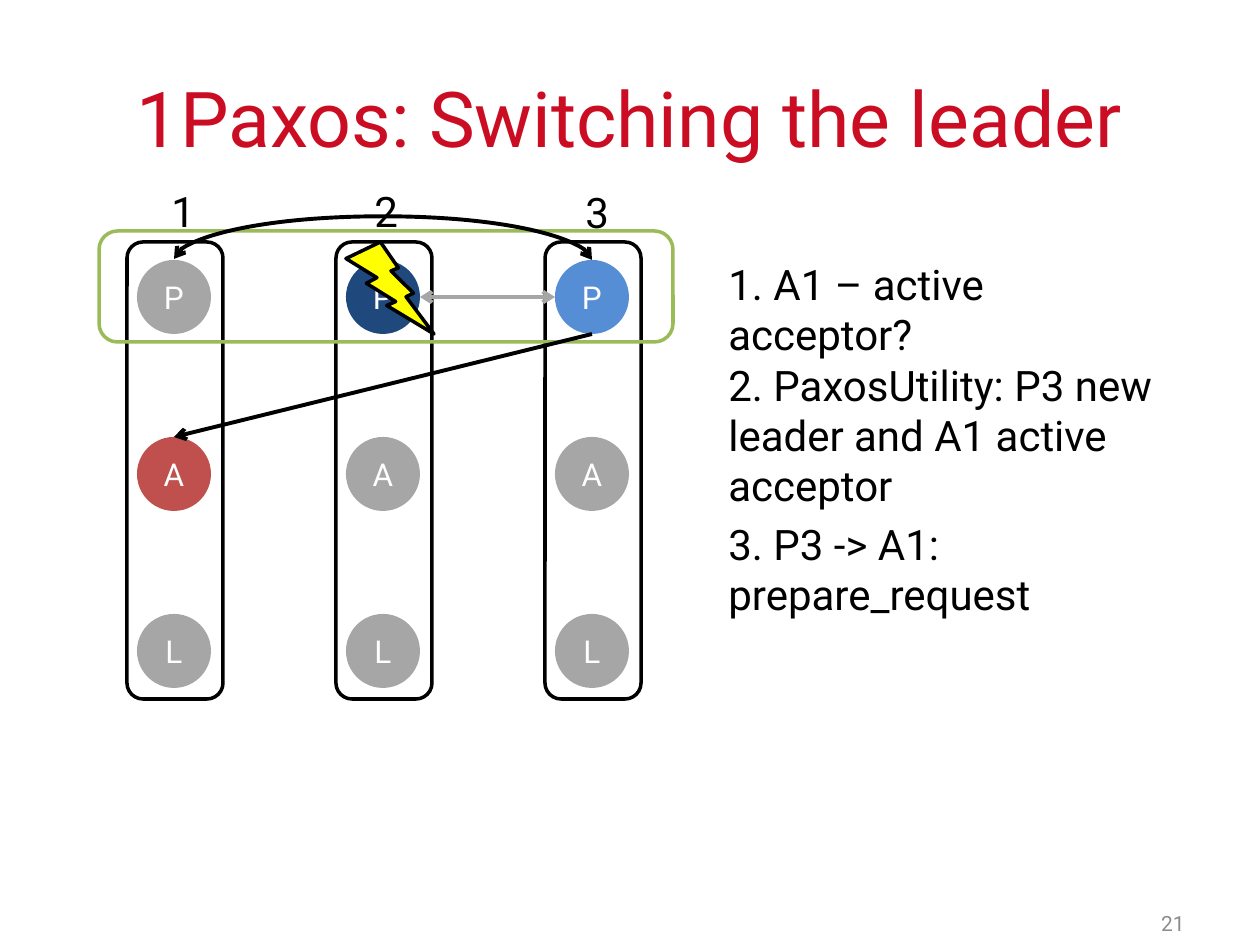
from lxml import etree
from pptx import Presentation
from pptx.dml.color import RGBColor
from pptx.enum.shapes import MSO_CONNECTOR, MSO_SHAPE
from pptx.enum.text import MSO_ANCHOR, PP_ALIGN
from pptx.oxml.ns import qn
from pptx.util import Pt

PX = 914400 / 126  # EMU in one px
FONT = "Roboto"
COLORS = {
    "title": "CB0D24", "number": "8C8C8C", "black": "000000", "white": "FFFFFF",
    "idle": "A6A6A6", "old_leader": "1F497D", "new_leader": "558ED5",
    "acceptor": "C0504D", "bolt": "FFFF00", "group": "9BBB59",
}
LEFT, CENTER, RIGHT = PP_ALIGN.LEFT, PP_ALIGN.CENTER, PP_ALIGN.RIGHT
TOP, MIDDLE = MSO_ANCHOR.TOP, MSO_ANCHOR.MIDDLE
STRAIGHT, CURVE = MSO_CONNECTOR.STRAIGHT, MSO_CONNECTOR.CURVE
ELLIPSE, ROUNDED, BOLT = MSO_SHAPE.OVAL, MSO_SHAPE.ROUNDED_RECTANGLE, MSO_SHAPE.LIGHTNING_BOLT

ROLES = ("P", "A", "L")
COLUMN_PITCH, COLUMN_WIDTH, COLUMN_HEIGHT = 209, 96, 457
NODE_SIZE, NODE_PITCH, NODE_LEFT, NODE_TOP = 74, 177, 10, 18
# Number, left and top of its label within the column, colours of P, A and L
PROCESSES = (
    ("1", 32, -63, ("idle", "acceptor", "idle")),
    ("2", 26, -63, ("old_leader", "idle", "idle")),
    ("3", 28, -62, ("new_leader", "idle", "idle")),
)
# Text, top and width of each step
STEPS = (
    ("1. A1 – active acceptor?", 0, 456),
    ("2. PaxosUtility: P3 new leader and A1 active acceptor", 101, 456),
    ("3. P3 -> A1: prepare_request", 260, 415),
)


def emu(*lengths):
    return [round(length * PX) for length in lengths]


def rgb(name):
    return RGBColor.from_string(COLORS[name])


def write(shape, text, size=24, color="black", align=LEFT, anchor=TOP, wrap=True):
    frame = shape.text_frame
    frame.word_wrap = wrap
    frame.vertical_anchor = anchor
    paragraph = frame.paragraphs[0]
    paragraph.alignment = align
    run = paragraph.add_run()
    run.text = text
    run.font.name = FONT
    run.font.size = Pt(size)
    run.font.color.rgb = rgb(color)


def add_text(slide, text, box, **text_format):
    write(slide.shapes.add_textbox(*emu(*box)), text, **text_format)


def add_shape(slide, kind, box, fill=None, line=None):
    shape = slide.shapes.add_shape(kind, *emu(*box))
    shape.shadow.inherit = False
    if fill:
        shape.fill.solid()
        shape.fill.fore_color.rgb = rgb(fill)
    else:
        shape.fill.background()
    if line:
        shape.line.color.rgb = rgb(line)
        shape.line.width = Pt(2)
    else:
        shape.line.fill.background()
    return shape


def add_arrow(slide, kind, begin, end, color, ends=("headEnd",)):
    arrow = slide.shapes.add_connector(kind, *emu(*begin, *end))
    arrow.line.color.rgb = rgb(color)
    arrow.line.width = Pt(2.25)
    properties = arrow.element.spPr
    outline = properties.find(qn("a:ln"))
    for name in ends:
        etree.SubElement(outline, qn("a:" + name), type="arrow")
    etree.SubElement(properties, qn("a:effectLst"))
    return arrow


def add_arc(slide, left, right, bottom, rise):
    """Double arrow between two points on one level, arching above them."""
    span, depth = right - left, 1
    x, y = (left + right - depth) / 2, bottom - (span + depth) / 2
    arc = add_arrow(slide, CURVE, (x, y), (x + depth, y + span), "black",
                    ends=("headEnd", "tailEnd"))
    transform = arc.element.spPr.find(qn("a:xfrm"))
    transform.set("rot", str(270 * 60000))
    transform.set("flipV", "1")
    geometry = arc.element.spPr.find(qn("a:prstGeom"))
    guides = geometry.find(qn("a:avLst"))
    if guides is None:
        guides = etree.SubElement(geometry, qn("a:avLst"))
    etree.SubElement(guides, qn("a:gd"), name="adj1", fmla=f"val {rise * 100000 // depth}")


def add_process(slide, left, top, number, label_left, label_top, fills):
    """One column: number, frame and role nodes; returns the nodes by role."""
    nodes = {}
    for row, (role, fill) in enumerate(zip(ROLES, fills)):
        box = (left + NODE_LEFT, top + NODE_TOP + row * NODE_PITCH, NODE_SIZE, NODE_SIZE)
        nodes[role] = add_shape(slide, ELLIPSE, box, fill=fill)
        write(nodes[role], role, size=18, color="white", align=CENTER, anchor=MIDDLE)
    add_shape(slide, ROUNDED, (left, top, COLUMN_WIDTH, COLUMN_HEIGHT), line="black")
    add_text(slide, number, (left + label_left, top + label_top, 43, 63), wrap=False)
    return nodes


def add_diagram(slide, left, top):
    columns = [left + index * COLUMN_PITCH for index in range(len(PROCESSES))]
    nodes = [add_process(slide, x, top, *process) for x, process in zip(columns, PROCESSES)]

    # Failure of the old leader, and the group of proposers
    add_shape(slide, BOLT, (columns[1] + NODE_LEFT, top, 88, 92), fill="bolt", line="black")
    add_shape(slide, ROUNDED, (left - 28, top - 11, 574, 111), line="group")

    # Messages
    centers = [x + NODE_LEFT + NODE_SIZE // 2 for x in columns]
    node_top = top + NODE_TOP
    middle = node_top + NODE_SIZE // 2
    add_arrow(slide, STRAIGHT, (columns[2] + NODE_LEFT, middle),
              (columns[1] + NODE_LEFT + NODE_SIZE, middle), "idle",
              ends=("headEnd", "tailEnd"))
    prepare = add_arrow(slide, STRAIGHT, (centers[0], node_top + NODE_PITCH),
                        (centers[2], node_top + NODE_SIZE), "black")
    prepare.begin_connect(nodes[0]["A"], 0)
    add_arc(slide, centers[0], centers[2], node_top, rise=44)


def add_steps(slide, left, top):
    for text, offset, width in STEPS:
        add_text(slide, text, (left, top + offset, width, 63))


def add_title(slide, text, box):
    title = slide.shapes.title
    title.left, title.top, title.width, title.height = emu(*box)
    write(title, text, size=44, color="title", align=CENTER, anchor=MIDDLE)


def main():
    presentation = Presentation()
    presentation.slide_width, presentation.slide_height = emu(1260, 945)
    slide = presentation.slides.add_slide(presentation.slide_layouts[5])
    add_title(slide, "1Paxos: Switching the leader", (63, 38, 1134, 157))
    add_diagram(slide, 127, 242)
    add_steps(slide, 716, 252)
    add_text(slide, "21", (903, 898, 294, 50), size=12, color="number",
             align=RIGHT, anchor=MIDDLE)
    presentation.save("out.pptx")


if __name__ == "__main__":
    main()
